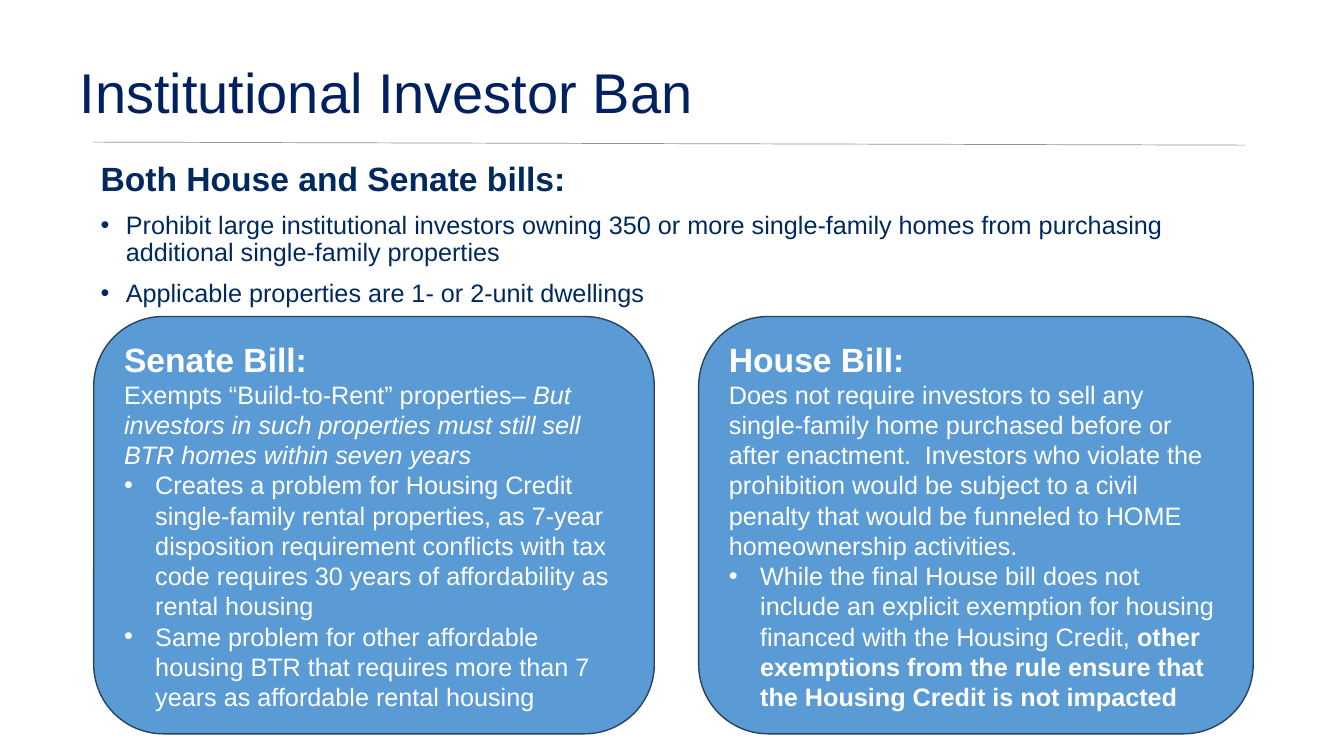
from lxml import etree
from pptx import Presentation
from pptx.dml.color import RGBColor
from pptx.enum.shapes import MSO_CONNECTOR, MSO_SHAPE
from pptx.enum.text import MSO_ANCHOR, PP_ALIGN
from pptx.oxml.ns import qn
from pptx.util import Inches, Pt

STRAIGHT = MSO_CONNECTOR.STRAIGHT
ROUNDED = MSO_SHAPE.ROUNDED_RECTANGLE
TOP, MIDDLE = MSO_ANCHOR.TOP, MSO_ANCHOR.MIDDLE
LEFT = PP_ALIGN.LEFT

FONT = "Arial"
TITLE_NAVY, NAVY, WHITE = "002060", "002A5F", "FFFFFF"
CARD_BLUE, CARD_EDGE, RULE_GREY = "5B9BD5", "28445D", "929292"
TITLE_SIZE, HEADING_SIZE, BODY_SIZE = 40, 24, 18


def rgb(value):
    return RGBColor.from_string(value)


class SlideBuilder:
    """Holds the style and the current slide."""

    def __init__(self, deck):
        self.page = deck.slides.add_slide(deck.slide_layouts[6])

    def rule(self, x1, y1, x2, y2):
        line = self.page.shapes.add_connector(
            STRAIGHT, Inches(x1), Inches(y1), Inches(x2), Inches(y2))
        line.line.color.rgb = rgb(RULE_GREY)
        line.line.width = Pt(0.5)
        etree.SubElement(line._element.spPr, qn("a:effectLst"))

    def text(self, left, top, width, height, paragraphs, color, anchor=TOP, **spacing):
        box = self.page.shapes.add_textbox(
            Inches(left), Inches(top), Inches(width), Inches(height))
        self.fill_text(box.text_frame, paragraphs, color, anchor, **spacing)

    def card(self, left, top, width, height, paragraphs):
        box = self.page.shapes.add_shape(
            ROUNDED, Inches(left), Inches(top), Inches(width), Inches(height))
        box.shadow.inherit = False
        box.fill.solid()
        box.fill.fore_color.rgb = rgb(CARD_BLUE)
        box.line.color.rgb = rgb(CARD_EDGE)
        box.line.width = Pt(1)
        self.fill_text(box.text_frame, paragraphs, WHITE, MIDDLE, indent=0.31)

    def fill_text(self, frame, paragraphs, color, anchor,
                  indent=0.25, line_spacing=None, space_before=None):
        """Each paragraph is (size, bulleted, [(text, style), ...])."""
        frame.word_wrap = True
        frame.vertical_anchor = anchor
        for index, (size, bulleted, spans) in enumerate(paragraphs):
            para = frame.add_paragraph() if index else frame.paragraphs[0]
            if bulleted:
                self.bullet(para, indent)
            para.alignment = LEFT
            if line_spacing:
                para.line_spacing = line_spacing
            if space_before and index:
                para.space_before = Pt(space_before)
            for words, style in spans:
                span = para.add_run()
                span.text = words
                span.font.name = FONT
                span.font.size = Pt(size)
                span.font.color.rgb = rgb(color)
                span.font.bold = style == "bold"
                span.font.italic = style == "italic"

    def bullet(self, para, indent):
        props = para._p.get_or_add_pPr()
        props.set("marL", str(Inches(indent)))
        props.set("indent", str(-Inches(indent)))
        etree.SubElement(props, qn("a:buFont")).set("typeface", FONT)
        etree.SubElement(props, qn("a:buChar")).set("char", "•")


def heading(words):
    return HEADING_SIZE, False, [(words, "bold")]


def plain(*spans):
    return BODY_SIZE, False, spans


def point(*spans):
    return BODY_SIZE, True, spans


def main():
    deck = Presentation()
    deck.slide_width, deck.slide_height = Inches(13.33), Inches(7.5)
    slide = SlideBuilder(deck)

    # Title and rule
    slide.rule(0.92, 1.41, 12.35, 1.44)
    title = (TITLE_SIZE, False, [("Institutional Investor Ban", "")])
    slide.text(0.69, 0.51, 12.28, 0.79, [title], TITLE_NAVY, MIDDLE)

    # Points shared by both bills
    slide.text(0.9, 1.56, 11.5, 1.7, [
        heading("Both House and Senate bills:"),
        point(("Prohibit large institutional investors owning 350 or more single-family "
               "homes from purchasing additional single-family properties", "")),
        point(("Applicable properties are 1- or 2-unit dwellings", "")),
    ], NAVY, line_spacing=0.9, space_before=10)

    # One card per bill
    card_top, card_height = 3.14, 4.14
    slide.card(0.93, card_top, 5.56, card_height, [
        heading("Senate Bill:"),
        plain(("Exempts “Build-to-Rent” properties– ", ""),
              ("But investors in such properties must still sell BTR homes "
               "within seven years", "italic")),
        point(("Creates a problem for Housing Credit single-family rental properties, "
               "as 7-year disposition requirement conflicts with tax code requires "
               "30 years of affordability as rental housing", "")),
        point(("Same problem for other affordable housing BTR that requires more than "
               "7 years as affordable rental housing", "")),
    ])
    slide.card(6.93, card_top, 5.5, card_height, [
        heading("House Bill:"),
        plain(("Does not require investors to sell any single-family home purchased "
               "before or after enactment.  Investors who violate the prohibition would "
               "be subject to a civil penalty that would be funneled to HOME "
               "homeownership activities.", "")),
        point(("While the final House bill does not include an explicit exemption for "
               "housing financed with the Housing Credit, ", ""),
              ("other exemptions from the rule ensure that the Housing Credit is not "
               "impacted", "bold")),
    ])

    deck.save("out.pptx")


if __name__ == "__main__":
    main()
